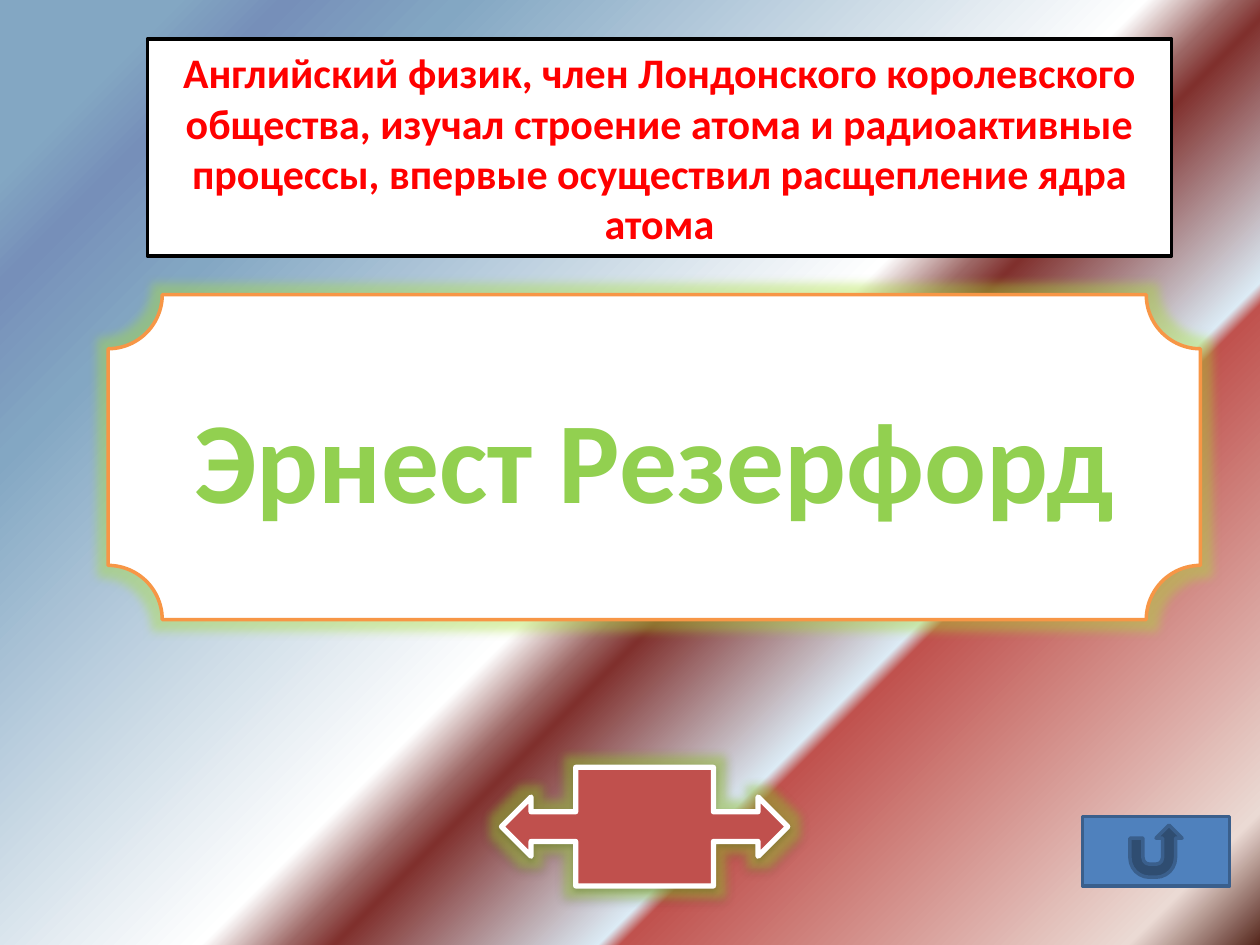
from lxml import etree
from pptx import Presentation
from pptx.dml.color import RGBColor
from pptx.enum.shapes import MSO_SHAPE
from pptx.enum.text import MSO_ANCHOR, MSO_AUTO_SIZE, PP_ALIGN
from pptx.oxml.ns import qn
from pptx.util import Cm, Pt

RECT = MSO_SHAPE.RECTANGLE
PLAQUE = MSO_SHAPE.PLAQUE
ARROWS = MSO_SHAPE.LEFT_RIGHT_ARROW_CALLOUT
BACK = MSO_SHAPE.ACTION_BUTTON_RETURN
MIDDLE = MSO_ANCHOR.MIDDLE
CENTER = PP_ALIGN.CENTER
GROW = MSO_AUTO_SIZE.SHAPE_TO_FIT_TEXT

HUES = {
    "white": "FFFFFF", "black": "000000", "red": "FF0000",
    "green": "92D050", "glow": "A8DF35", "orange": "F79646",
    "brick": "C0504D", "blue": "4F81BD", "navy": "3A5F8C",
}
STOPS = [
    (8, "83A7C3", 100), (13, "768FB9", 100), (21, "83A7C3", 100),
    (52, "FFFFFF", 100), (56, "9C6563", 100), (58, "80302D", 100),
    (70, "DCEBF5", 54), (71, "C0524E", 100), (94, "EBDAD4", 100),
    (100, "55261C", 100),
]


def hue(name):
    return RGBColor.from_string(HUES[name])


def add_node(parent, tag, **attrs):
    node = etree.SubElement(parent, qn(tag))
    for key, value in attrs.items():
        node.set(key, str(value))
    return node


def add_hue(parent, code, alpha):
    node = add_node(parent, "a:srgbClr", val=code)
    if alpha < 100:
        add_node(node, "a:alpha", val=alpha * 1000)


def paint_back(slide):
    fill = slide.background.fill
    fill.gradient()
    fill.gradient_angle = 315
    stops = slide.element.find(".//" + qn("a:gsLst"))
    for stop in list(stops):
        stops.remove(stop)
    for place, code, alpha in STOPS:
        add_hue(add_node(stops, "a:gs", pos=place * 1000), code, alpha)


def add_shape(slide, kind, box, fill, line, width):
    shape = slide.shapes.add_shape(kind, *[Cm(size) for size in box])
    shape.shadow.inherit = False
    shape.fill.solid()
    shape.fill.fore_color.rgb = hue(fill)
    shape.line.color.rgb = hue(line)
    shape.line.width = Pt(width)
    return shape


def add_text(shape, text, size, color):
    frame = shape.text_frame
    frame.word_wrap = True
    frame.vertical_anchor = MIDDLE
    para = frame.paragraphs[0]
    para.alignment = CENTER
    run = para.add_run()
    run.text = text
    run.font.name = "Calibri"
    run.font.size = Pt(size)
    run.font.bold = True
    run.font.color.rgb = hue(color)


def add_glow(shape):
    effects = shape.element.spPr.find(qn("a:effectLst"))
    glow = add_node(effects, "a:glow", rad=Pt(11))
    add_hue(glow, HUES["glow"], 40)
    return effects


def add_shade(effects):
    shade = add_node(effects, "a:outerShdw", blurRad=Pt(3.1), dist=Pt(1.6),
                     dir=5400000, rotWithShape=0)
    add_hue(shade, HUES["black"], 38)


def main():
    deck = Presentation()
    deck.slide_width, deck.slide_height = Cm(25.4), Cm(19.05)
    slide = deck.slides.add_slide(deck.slide_layouts[6])
    paint_back(slide)

    clue = add_shape(slide, RECT, (2.97, 0.79, 20.65, 4.37), "white", "black", 2)
    add_text(clue, "Английский физик, член Лондонского королевского общества, "
             "изучал строение атома и радиоактивные процессы, впервые "
             "осуществил расщепление ядра атома", 24, "red")
    clue.text_frame.auto_size = GROW

    arrows = add_shape(slide, ARROWS, (10.11, 15.47, 5.77, 2.39), "brick", "white", 3)
    add_shade(add_glow(arrows))

    name = add_shape(slide, PLAQUE, (2.18, 5.94, 22.02, 6.55), "white", "orange", 2)
    add_text(name, "Эрнест Резерфорд", 66, "green")
    add_glow(name)

    add_shape(slide, BACK, (21.82, 16.46, 2.97, 1.4), "blue", "navy", 2)
    deck.save("out.pptx")


if __name__ == "__main__":
    main()
